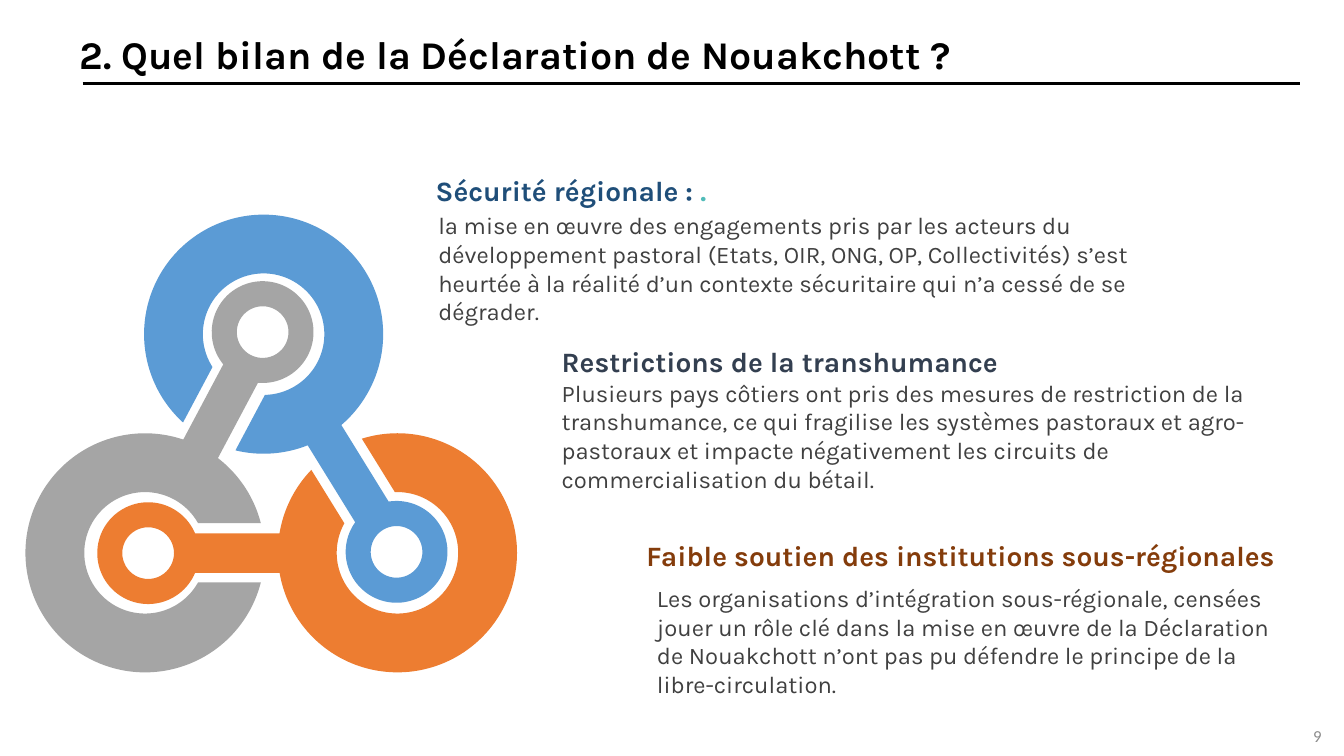
from math import asin, cos, degrees, radians, sin

from lxml import etree
from pptx import Presentation
from pptx.dml.color import RGBColor
from pptx.enum.shapes import MSO_CONNECTOR as Connector, MSO_SHAPE as Shape
from pptx.enum.text import MSO_AUTO_SIZE as AutoSize, PP_ALIGN as Align
from pptx.oxml.ns import qn
from pptx.util import Pt

OUTER, INNER, SLOT = 85.4, 43.4, 21.2
BAR_LENGTH, BAR_WIDTH, EYE = 92.9, 28.1, 72.7

LINKS = [
    ((188.3, 238.7), (283.3, 394.2), 58.3, 118, 70.1, "5B9BD5"),
    ((103.6, 394.9), (187.6, 237.2), 298, 0, 67, "A5A5A5"),
    ((283.9, 394.9), (105.8, 395.1), 180, 238.3, 66.2, "ED7D31"),
]

FINDINGS = [
    ((304.1, 120.6, 524.2, 31.7), (306, 147.3, 524.2, 90),
     [("Sécurité régionale : ", "1F4E79"), (".", "51BCB9")],
     "la mise en œuvre des engagements pris par les acteurs du développement pastoral "
     "(Etats, OIR, ONG, OP, Collectivités) s’est heurtée à la réalité d’un contexte "
     "sécuritaire qui n’a cessé de se dégrader."),
    ((394.1, 242.3, 483.8, 31.7), (394.1, 266.8, 505.4, 90),
     [("Restrictions de la transhumance", "333F50")],
     "Plusieurs pays côtiers ont pris des mesures de restriction de la transhumance, "
     "ce qui fragilise les systèmes pastoraux et agro-pastoraux et impacte négativement "
     "les circuits de commercialisation du bétail."),
    ((454.6, 381, 482.4, 31.7), (462.2, 413.6, 460.8, 90),
     [("Faible soutien des institutions sous-régionales", "843C0B")],
     "Les organisations d’intégration sous-régionale, censées jouer un rôle clé dans la "
     "mise en œuvre de la Déclaration de Nouakchott n’ont pas pu défendre le principe "
     "de la libre-circulation."),
]


def color(value):
    """Turn a hex string into a colour."""
    return RGBColor.from_string(value)


def paint(shape, fill):
    """Give a shape a plain fill without line or shadow."""
    shape.shadow.inherit = False
    shape.fill.solid()
    shape.fill.fore_color.rgb = color(fill)
    shape.line.fill.background()


def add_text(slide, box, runs, size, bold=False, font="Karla", align=Align.LEFT):
    """Write one paragraph of coloured runs in a box."""
    frame = slide.shapes.add_textbox(*map(Pt, box)).text_frame
    frame.word_wrap = True
    frame.auto_size = AutoSize.SHAPE_TO_FIT_TEXT
    paragraph = frame.paragraphs[0]
    paragraph.alignment = align
    for text, fill in runs:
        run = paragraph.add_run()
        run.text = text
        run.font.name = font
        run.font.size = Pt(size)
        run.font.bold = bold
        run.font.color.rgb = color(fill)


def polar(center, radius, angle):
    """Return the point at a radius and an angle in degrees from a centre."""
    x, y = center
    return x + radius * cos(radians(angle)), y + radius * sin(radians(angle))


def add_point(path, step, point):
    """Append a move or a line to a path."""
    x, y = map(Pt, point)
    etree.SubElement(etree.SubElement(path, qn(step)), qn("a:pt"), x=str(x), y=str(y))


def add_arc(path, radius, start, sweep):
    """Append a circular arc to a path."""
    size = str(Pt(radius))
    etree.SubElement(path, qn("a:arcTo"), wR=size, hR=size,
                     stAng=str(round(start % 360 * 60000)),
                     swAng=str(round(sweep * 60000)))


def add_ring(slide, center, slot, fill):
    """Draw a ring that a straight slot cuts open on one side."""
    x, y = center
    left, top, right, bottom = map(Pt, (x - OUTER, y - OUTER, x + OUTER, y + OUTER))
    builder = slide.shapes.build_freeform(left, top)
    builder.add_line_segments([(right, top), (right, bottom), (left, bottom)])
    ring = builder.convert_to_shape()
    path = next(ring.element.iter(qn("a:path")))
    for step in list(path):
        path.remove(step)
    middle = (OUTER, OUTER)
    outer_gap, inner_gap = (degrees(asin(SLOT / radius)) for radius in (OUTER, INNER))
    add_point(path, "a:moveTo", polar(middle, OUTER, slot + outer_gap))
    add_arc(path, OUTER, slot + outer_gap, 360 - 2 * outer_gap)
    add_point(path, "a:lnTo", polar(middle, INNER, slot - inner_gap))
    add_arc(path, INNER, slot - inner_gap, 2 * inner_gap - 360)
    etree.SubElement(path, qn("a:close"))
    paint(ring, fill)


def add_centered(slide, kind, center, width, height, fill):
    """Place a preset shape around a centre."""
    x, y = center
    box = (x - width / 2, y - height / 2, width, height)
    shape = slide.shapes.add_shape(kind, *map(Pt, box))
    paint(shape, fill)
    return shape


def add_link(slide, center, eye, heading, slot, reach, fill):
    """Draw a slotted ring with the bar and the eye that hook into the next ring."""
    add_ring(slide, center, slot, fill)
    bar = add_centered(slide, Shape.RECTANGLE, polar(eye, -reach, heading),
                       BAR_WIDTH, BAR_LENGTH, fill)
    bar.rotation = (heading + 270) % 360
    donut = add_centered(slide, Shape.DONUT, eye, EYE, EYE, fill)
    donut.rotation = bar.rotation
    donut.adjustments[0] = 0.246


def add_header(slide, box):
    """Write the title and the rule below it."""
    left, top, width, height = box
    add_text(slide, box, [("2. Quel bilan de la Déclaration de Nouakchott ?", "000000")],
             28, bold=True)
    rule_y = Pt(top + height + 0.7)
    rule = slide.shapes.add_connector(Connector.STRAIGHT, Pt(left + 9.3), rule_y,
                                      Pt(left + width - 31.7), rule_y)
    rule.line.color.rgb = color("000000")
    rule.line.width = Pt(2.25)
    etree.SubElement(rule.element.spPr, qn("a:effectLst"))


def add_finding(slide, heading_box, body_box, heading, body):
    """Write one finding: its text and its heading."""
    add_text(slide, body_box, [(body, "404040")], 17)
    add_text(slide, heading_box, heading, 20, bold=True)


def main():
    """Build and save the slide."""
    presentation = Presentation()
    presentation.slide_width = Pt(960)
    presentation.slide_height = Pt(540)
    slide = presentation.slides.add_slide(presentation.slide_layouts[6])
    add_text(slide, (923, 514.8, 36, 21.6), [("9", "8C8C8C")], 12,
             font="Calibri", align=Align.CENTER)
    add_header(slide, (49.7, 18, 910.8, 41))
    for link in LINKS:
        add_link(slide, *link)
    for finding in FINDINGS:
        add_finding(slide, *finding)
    presentation.save("out.pptx")


if __name__ == "__main__":
    main()
